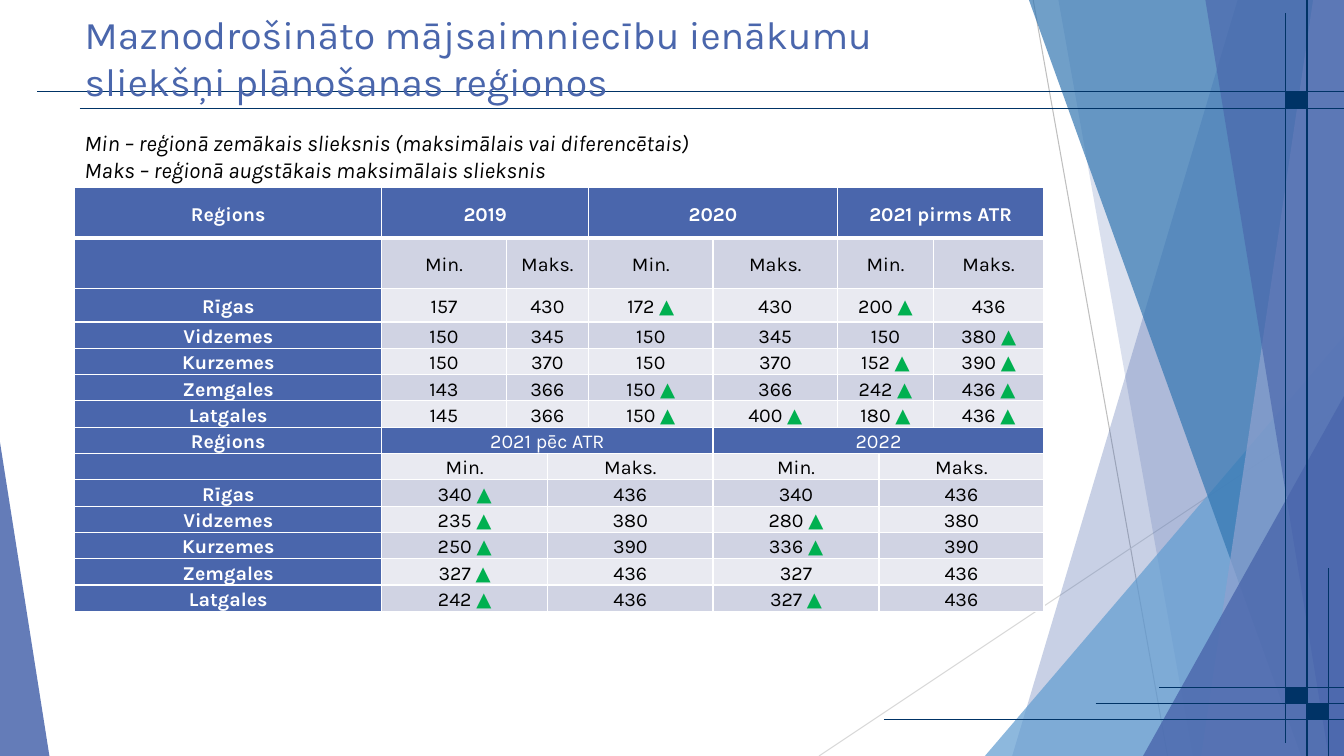
from dataclasses import dataclass

from lxml import etree
from pptx import Presentation
from pptx.dml.color import RGBColor
from pptx.enum.shapes import MSO_CONNECTOR, MSO_SHAPE
from pptx.enum.text import MSO_ANCHOR, MSO_AUTO_SIZE, PP_ALIGN
from pptx.oxml.ns import qn
from pptx.util import Pt

STRAIGHT = MSO_CONNECTOR.STRAIGHT
TRIANGLE = MSO_SHAPE.ISOSCELES_TRIANGLE
RECTANGLE = MSO_SHAPE.RECTANGLE
TOP, MIDDLE = MSO_ANCHOR.TOP, MSO_ANCHOR.MIDDLE
LEFT, CENTER = PP_ALIGN.LEFT, PP_ALIGN.CENTER
NO_AUTOFIT = MSO_AUTO_SIZE.NONE


@dataclass(frozen=True)
class Theme:
    font: str = "Karla"
    title_size: int = 28
    note_size: int = 16
    table_size: int = 14
    blue: str = "4A66AC"
    sky: str = "629DD1"
    ocean: str = "3477B2"
    lavender: str = "90A2CF"
    navy: str = "003366"
    grey: str = "BFBFBF"
    pale_grey: str = "D9D9D9"
    band_dark: str = "D0D3E3"
    band_light: str = "E9EAF1"
    rise: str = "00B050"
    black: str = "000000"
    white: str = "FFFFFF"


THEME = Theme()
WIDTH, HEIGHT = 960, 540
RISE = "▲"
COLUMN_WIDTHS = [219.2, 88.9, 29.6, 29.3, 88.9, 88.9, 29.6, 38.9, 79]
ROW_HEIGHTS = [36, 36, 24] + [18.8] * 11

BEFORE_STARTS, BEFORE_YEARS = [0, 1, 2, 4, 5, 6, 8], [0, 1, 4, 6]
AFTER_STARTS, AFTER_YEARS = [0, 1, 3, 5, 7], [0, 1, 5]
BEFORE_REFORM = [
    ["Reģions", "2019", "2020", "2021 pirms ATR"],
    [""] + ["Min.", "Maks."] * 3,
    ["Rīgas", "157", "430", "172 ▲", "430", "200 ▲", "436"],
    ["Vidzemes", "150", "345", "150", "345", "150", "380 ▲"],
    ["Kurzemes", "150", "370", "150", "370", "152 ▲", "390 ▲"],
    ["Zemgales", "143", "366", "150 ▲", "366", "242 ▲", "436 ▲"],
    ["Latgales", "145", "366", "150 ▲", "400 ▲", "180 ▲", "436 ▲"],
]
AFTER_REFORM = [
    ["Reģions", "2021 pēc ATR", "2022"],
    [""] + ["Min.", "Maks."] * 2,
    ["Rīgas", "340 ▲", "436", "340", "436"],
    ["Vidzemes", "235 ▲", "380", "280 ▲", "380"],
    ["Kurzemes", "250 ▲", "390", "336 ▲", "390"],
    ["Zemgales", "327 ▲", "436", "327", "436"],
    ["Latgales", "242 ▲", "436", "327 ▲", "436"],
]


def rgb(color):
    return RGBColor.from_string(color)


def set_font(paragraph, size, color, bold=False, italic=False):
    font = paragraph.font
    font.name, font.size = THEME.font, Pt(size)
    font.bold, font.italic = bold, italic
    font.color.rgb = rgb(color)


def paint(shape, color, opacity):
    shape.shadow.inherit = False
    shape.fill.solid()
    shape.fill.fore_color.rgb = rgb(color)
    shape.line.fill.background()
    tint = shape.fill._xPr.find(".//" + qn("a:srgbClr"))
    etree.SubElement(tint, qn("a:alpha"), val=str(opacity * 1000))


def add_rule(slide, x1, y1, x2, y2, color=THEME.navy):
    rule = slide.shapes.add_connector(STRAIGHT, Pt(x1), Pt(y1), Pt(x2), Pt(y2))
    rule.line.color.rgb = rgb(color)
    rule.line.width = Pt(0.75)
    etree.SubElement(rule._element.spPr, qn("a:effectLst"))


def add_slab(slide, top_x, bottom_x, color, opacity):
    outline = slide.shapes.build_freeform(Pt(top_x), 0)
    corners = [(WIDTH, 0), (WIDTH, HEIGHT), (bottom_x, HEIGHT)]
    outline.add_line_segments([(Pt(x), Pt(y)) for x, y in corners])
    paint(outline.convert_to_shape(), color, opacity)


def add_wedge(slide, left, top, width, apex, color, opacity):
    wedge = slide.shapes.add_shape(TRIANGLE, Pt(left), Pt(top), Pt(width), Pt(HEIGHT - top))
    wedge.adjustments[0] = apex
    paint(wedge, color, opacity)


def add_knot(slide, left, top):
    knot = slide.shapes.add_shape(RECTANGLE, Pt(left), Pt(top), Pt(15.2), Pt(11.5))
    paint(knot, THEME.navy, 100)
    knot.line.color.rgb = rgb(THEME.navy)
    knot.line.width = Pt(0.75)


def add_backdrop(slide):
    add_rule(slide, 738, 0, 834, HEIGHT, THEME.grey)
    add_rule(slide, WIDTH, 290, 585, HEIGHT, THEME.pale_grey)
    add_slab(slide, 884, 723, THEME.blue, 30)
    add_slab(slide, 756, 852, THEME.blue, 20)
    add_wedge(slide, 703.5, 240, 256.5, 1, THEME.sky, 72)
    add_slab(slide, 735, 929.5, THEME.ocean, 70)
    add_slab(slide, 938, 858, THEME.lavender, 70)
    add_slab(slide, 861, 949, THEME.blue, 65)
    add_wedge(slide, 816.5, 283, 143.5, 1, THEME.blue, 80)
    add_wedge(slide, 0, 316, 35.3, 0, THEME.blue, 85)
    for left, y in [(26.6, 65.7), (56.9, 77.2), (782.6, 502.4), (828, 490.9), (631.4, 513.9)]:
        add_rule(slide, left, y, WIDTH, y)
    for x, top, bottom in [(933.6, 0, HEIGHT), (918.5, 9.4, 530.6), (949, 406, HEIGHT)]:
        add_rule(slide, x, top, x, bottom)
    for left, top in [(918.5, 65.7), (918.5, 490.9), (933.6, 502.4)]:
        add_knot(slide, left, top)


def place_title(slide, text):
    title = slide.shapes.title
    title.left, title.top, title.width, title.height = Pt(53.3), Pt(3.6), Pt(676.8), Pt(62.6)
    frame = title.text_frame
    frame.text = text
    frame.auto_size, frame.vertical_anchor = NO_AUTOFIT, TOP
    frame.paragraphs[0].alignment = LEFT
    set_font(frame.paragraphs[0], THEME.title_size, THEME.blue)
    title._element.getparent().append(title._element)


def add_notes_on_terms(slide, text):
    frame = slide.shapes.add_textbox(Pt(53.3), Pt(88.6), Pt(568), Pt(46)).text_frame
    frame.word_wrap = True
    frame.text = text
    for paragraph in frame.paragraphs:
        set_font(paragraph, THEME.note_size, THEME.black, italic=True)


def style_cell(cell, fill, bottom_width):
    properties = cell._tc.get_or_add_tcPr()
    for side, width in [("L", 1), ("R", 1), ("T", 1), ("B", bottom_width)]:
        border = etree.SubElement(properties, qn(f"a:ln{side}"), w=str(Pt(width)))
        solid = etree.SubElement(border, qn("a:solidFill"))
        etree.SubElement(solid, qn("a:srgbClr"), val=THEME.white)
    cell.fill.solid()
    cell.fill.fore_color.rgb = rgb(fill)
    cell.margin_left = cell.margin_right = Pt(5)
    cell.margin_top = cell.margin_bottom = 0
    cell.vertical_anchor = MIDDLE


def write_cell(cell, text, color, bold):
    paragraph = cell.text_frame.paragraphs[0]
    paragraph.alignment, paragraph.line_spacing = CENTER, 1.15
    set_font(paragraph, THEME.table_size, color, bold)
    value, rise, _ = text.partition(RISE)
    if not value:
        etree.SubElement(paragraph._p, qn("a:endParaRPr"), sz=str(THEME.table_size * 100))
        return
    paragraph.add_run().text = value
    if rise:
        mark = paragraph.add_run()
        mark.text = rise
        mark.font.color.rgb = rgb(THEME.rise)


def fill_section(table, first_row, rows, year_starts, value_starts):
    last = len(COLUMN_WIDTHS)
    for offset, texts in enumerate(rows):
        row = first_row + offset
        is_header = offset == 0
        starts = year_starts if is_header else value_starts
        band = THEME.band_dark if row % 2 else THEME.band_light
        for start, end, text in zip(starts, starts[1:] + [last], texts):
            on_blue = is_header or start == 0
            for column in range(start, end):
                style_cell(table.cell(row, column), THEME.blue if on_blue else band, 1 if row else 3)
            cell = table.cell(row, start)
            if end - start > 1:
                cell.merge(table.cell(row, end - 1))
            write_cell(cell, text, THEME.white if on_blue else THEME.black,
                       start == 0 or row == 0)


def add_thresholds(slide):
    table = slide.shapes.add_table(len(ROW_HEIGHTS), len(COLUMN_WIDTHS), Pt(53.5), Pt(134),
                                   Pt(sum(COLUMN_WIDTHS)), Pt(sum(ROW_HEIGHTS))).table
    table.horz_banding = False
    for column, width in zip(table.columns, COLUMN_WIDTHS):
        column.width = Pt(width)
    for row, height in zip(table.rows, ROW_HEIGHTS):
        row.height = Pt(height)
    fill_section(table, 0, BEFORE_REFORM, BEFORE_YEARS, BEFORE_STARTS)
    fill_section(table, len(BEFORE_REFORM), AFTER_REFORM, AFTER_YEARS, AFTER_STARTS)


def main():
    deck = Presentation()
    deck.slide_width, deck.slide_height = Pt(WIDTH), Pt(HEIGHT)
    slide = deck.slides.add_slide(deck.slide_layouts[5])
    add_backdrop(slide)
    place_title(slide, "Maznodrošināto mājsaimniecību ienākumu sliekšņi plānošanas reģionos")
    add_thresholds(slide)
    add_notes_on_terms(slide, "Min – reģionā zemākais slieksnis (maksimālais vai diferencētais)\n"
                              "Maks – reģionā augstākais maksimālais slieksnis")
    deck.save("out.pptx")


if __name__ == "__main__":
    main()
